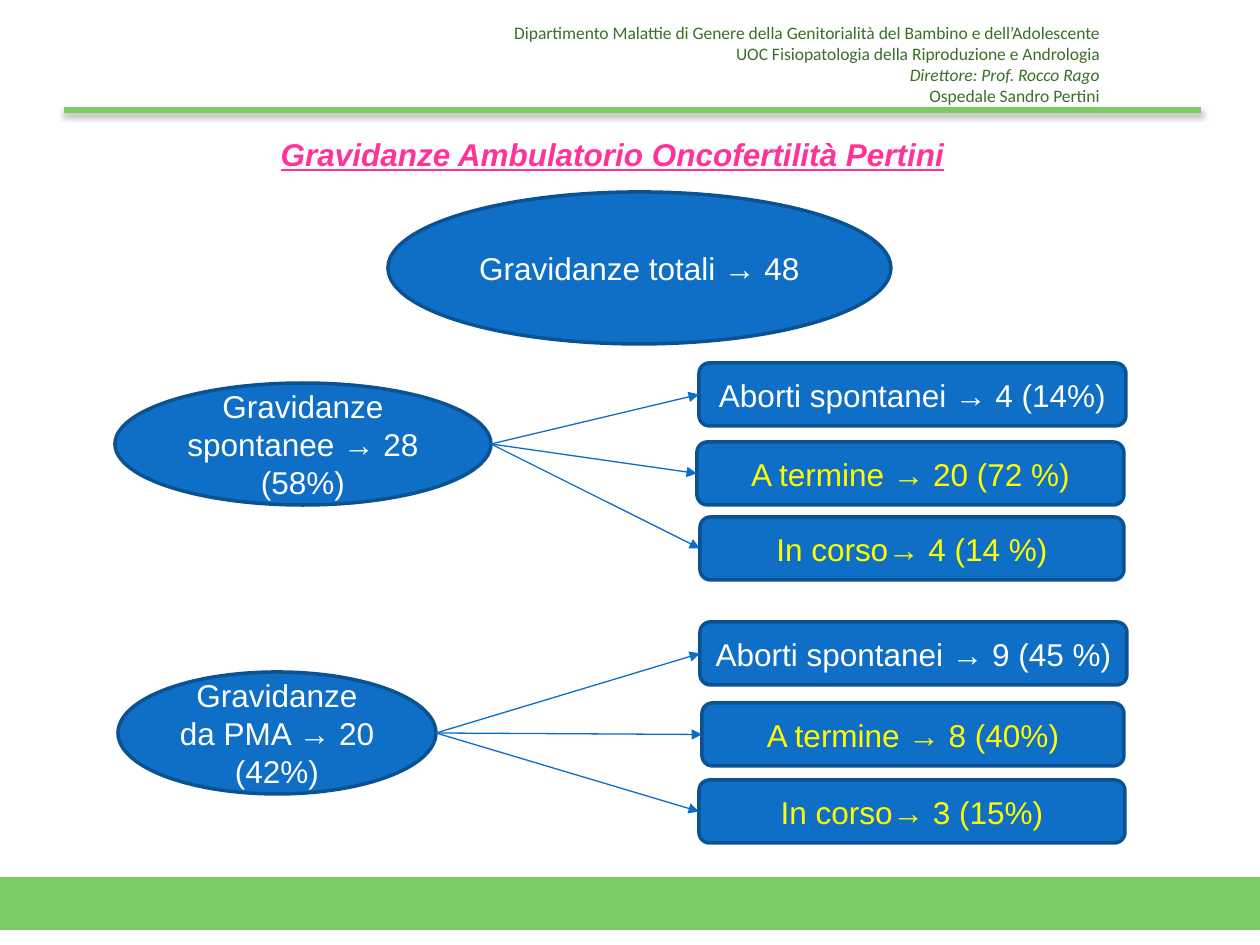
"""Build the slide on pregnancies followed by the oncofertility clinic."""
from lxml import etree
from pptx import Presentation
from pptx import util as u
from pptx.dml.color import RGBColor
from pptx.enum import shapes, text
from pptx.oxml.ns import qn

PX = 914400 // 126
GREEN = RGBColor(0x7C, 0xCA, 0x62)
DARK_GREEN = RGBColor(0x38, 0x70, 0x26)
PINK = RGBColor(0xFF, 0x33, 0x99)
BLUE = RGBColor(0x0F, 0x6F, 0xC6)
DARK_BLUE = RGBColor(0x0B, 0x52, 0x92)
ARROW_BLUE = RGBColor(0x0A, 0x6D, 0xC6)
WHITE = RGBColor(0xFF, 0xFF, 0xFF)
YELLOW = RGBColor(0xFF, 0xFF, 0x00)
BLACK = RGBColor(0, 0, 0)

HEADER = [
    ("Dipartimento Malattie di Genere della Genitorialità del Bambino e dell’Adolescente", False),
    ("UOC Fisiopatologia della Riproduzione e Andrologia", False),
    ("Direttore: Prof. Rocco Rago", True),
    ("Ospedale Sandro Pertini", False),
]
TOTAL = ("Gravidanze totali → 48", (388, 192, 503, 152))
GROUPS = [
    (("Gravidanze spontanee → 28 (58%)", (115, 383, 376, 122)), [
        ("Aborti spontanei → 4 (14%)", (699, 363, 427, 63), WHITE),
        ("A termine → 20 (72 %)", (697, 442, 427, 63), YELLOW),
        ("In corso→ 4 (14 %)", (700, 517, 424, 63), YELLOW)]),
    (("Gravidanze da PMA → 20 (42%)", (118, 672, 318, 122)), [
        ("Aborti spontanei → 9 (45 %)", (700, 622, 427, 63), WHITE),
        ("A termine → 8 (40%)", (702, 703, 422, 63), YELLOW),
        ("In corso→ 3 (15%)", (699, 780, 426, 63), YELLOW)]),
]


def px(*values):
    return [u.Emu(v * PX) for v in values]


def write(p, content, size=18, font="Arial", color=WHITE, bold=False,
          italic=False, underline=False, align=text.PP_ALIGN.CENTER):
    p.alignment = align
    r = p.add_run()
    r.text = content
    f = r.font
    f.size, f.name = u.Pt(size), font
    f.bold, f.italic, f.underline = bold, italic, underline
    f.color.rgb = color


def add_box(s, kind, box, fill, line):
    sp = s.shapes.add_shape(kind, *px(*box))
    sp.shadow.inherit = False
    sp.fill.solid()
    sp.fill.fore_color.rgb = fill
    sp.line.color.rgb = line
    sp.line.width = u.Pt(2)
    return sp


def add_node(s, kind, content, box, color=WHITE):
    sp = add_box(s, kind, box, BLUE, DARK_BLUE)
    tf = sp.text_frame
    tf.word_wrap = True
    tf.vertical_anchor = text.MSO_ANCHOR.MIDDLE
    write(tf.paragraphs[0], content, color=color)
    return sp


def add_line(s, points, color, width):
    line = s.shapes.add_connector(shapes.MSO_CONNECTOR.STRAIGHT, *px(*points))
    line.line.color.rgb = color
    line.line.width = u.Pt(width)
    effects = etree.SubElement(line._element.spPr, qn("a:effectLst"))
    return line, effects


def add_arrow(s, start, target):
    line, _ = add_line(s, (*start, *start), ARROW_BLUE, 0.75)
    line.end_connect(target, 1)
    etree.SubElement(line.line._get_or_add_ln(), qn("a:tailEnd"), type="triangle")


def add_rule(s):
    _, effects = add_line(s, (64, 110, 1201, 110), GREEN, 3)
    shadow = etree.SubElement(effects, qn("a:outerShdw"), blurRad=str(u.Pt(3.1)),
                              dist=str(u.Pt(1.8)), dir="5400000", rotWithShape="0")
    color = etree.SubElement(shadow, qn("a:srgbClr"), val=str(BLACK))
    etree.SubElement(color, qn("a:alpha"), val="35000")


def add_header(s):
    tf = s.shapes.add_textbox(*px(483, 16, 629, 117)).text_frame
    tf.word_wrap = True
    for i, (content, italic) in enumerate(HEADER):
        p = tf.add_paragraph() if i else tf.paragraphs[0]
        write(p, content, size=10, font="Calibri", color=DARK_GREEN,
              italic=italic, align=text.PP_ALIGN.RIGHT)


def add_title(s, content):
    sp = s.shapes.title
    sp.left, sp.top, sp.width, sp.height = px(268, 129, 692, 50)
    tf = sp.text_frame
    tf.auto_size = text.MSO_AUTO_SIZE.NONE
    tf.word_wrap = True
    tf.vertical_anchor = text.MSO_ANCHOR.TOP
    write(tf.paragraphs[0], content, color=PINK, bold=True, italic=True,
          underline=True, align=text.PP_ALIGN.LEFT)


def add_group(s, source, outcomes):
    content, (left, top, width, height) = source
    add_node(s, shapes.MSO_SHAPE.OVAL, *source)
    for outcome in outcomes:
        target = add_node(s, shapes.MSO_SHAPE.ROUNDED_RECTANGLE, *outcome)
        add_arrow(s, (left + width, top + height // 2), target)


def main():
    prs = Presentation()
    prs.slide_width, prs.slide_height = px(1260, 945)
    s = prs.slides.add_slide(prs.slide_layouts[5])
    add_box(s, shapes.MSO_SHAPE.RECTANGLE, (0, 879, 1259, 49), GREEN, GREEN)
    add_rule(s)
    add_header(s)
    add_title(s, "Gravidanze Ambulatorio Oncofertilità Pertini")
    add_node(s, shapes.MSO_SHAPE.OVAL, *TOTAL)
    for source, outcomes in GROUPS:
        add_group(s, source, outcomes)
    prs.save("out.pptx")


if __name__ == "__main__":
    main()
